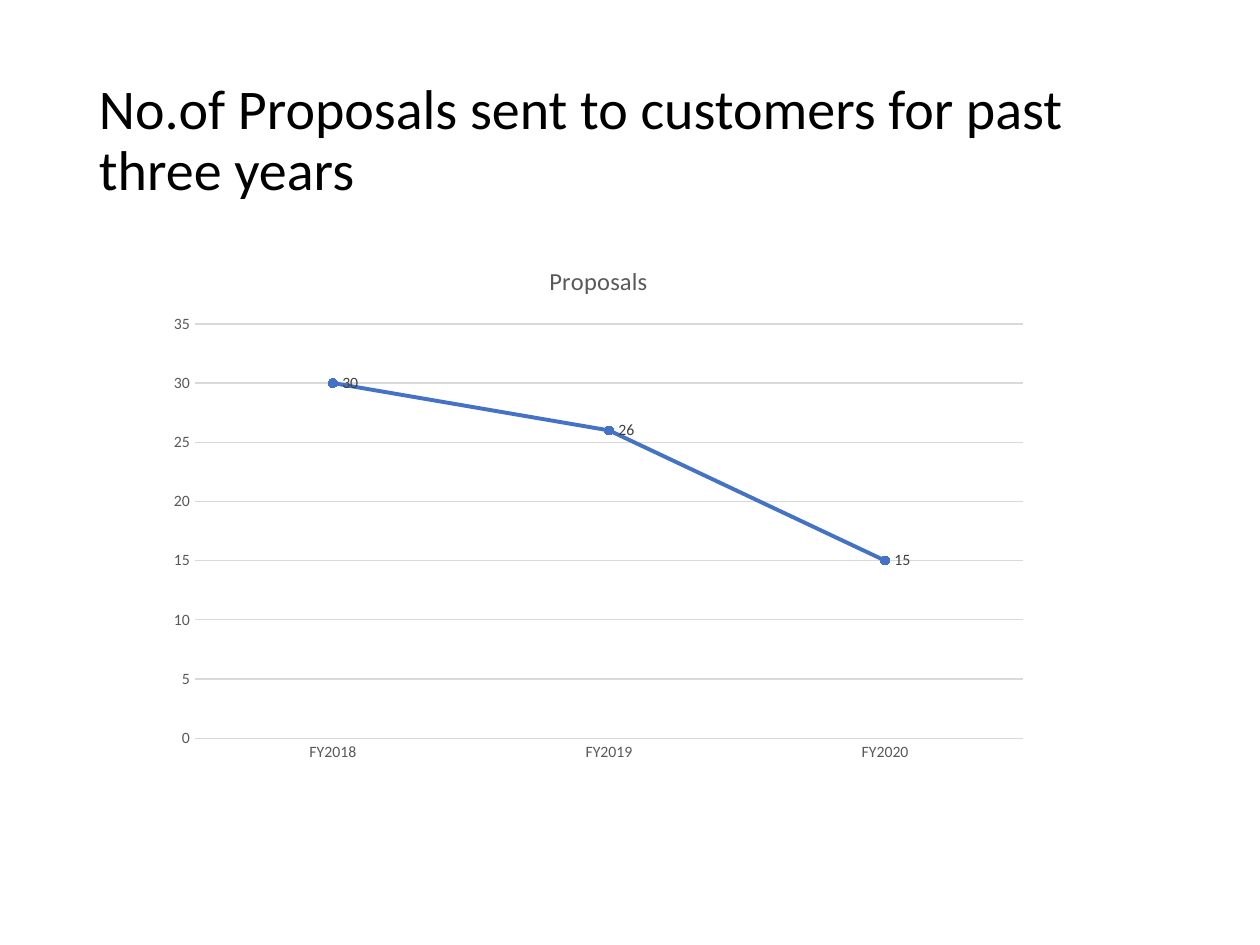
import pptx
import pptx.chart.data
import pptx.dml.color
import pptx.enum.chart
import pptx.enum.text
import pptx.util

Pt = pptx.util.Pt
FONT = "Calibri"
COLORS = {
    "title": "000000",
    "axis_text": "595959",
    "label": "404040",
    "grid": "D9D9D9",
    "series": "4472C4",
}
PROPOSALS = {"FY2018": 30, "FY2019": 26, "FY2020": 15}


def color(name):
    return pptx.dml.color.RGBColor.from_string(COLORS[name])


def style_font(font, size, color_name):
    font.name = FONT
    font.size = Pt(size)
    font.bold = False
    font.color.rgb = color(color_name)


def style_line(line, width, color_name):
    line.width = Pt(width)
    line.color.rgb = color(color_name)


def add_title(slide, text):
    box = slide.shapes.add_textbox(Pt(49.5), Pt(28.75), Pt(621), Pt(104.4))
    frame = box.text_frame
    frame.word_wrap = True
    frame.vertical_anchor = pptx.enum.text.MSO_ANCHOR.MIDDLE
    paragraph = frame.paragraphs[0]
    paragraph.text = text
    paragraph.line_spacing = 0.9
    style_font(paragraph.font, 32, "title")


def style_axes(chart):
    for axis in (chart.category_axis, chart.value_axis):
        axis.major_tick_mark = pptx.enum.chart.XL_TICK_MARK.NONE
        axis.minor_tick_mark = pptx.enum.chart.XL_TICK_MARK.NONE
        style_font(axis.tick_labels.font, 9, "axis_text")
    style_line(chart.category_axis.format.line, 0.75, "grid")
    value_axis = chart.value_axis
    value_axis.minimum_scale = 0
    value_axis.maximum_scale = 35
    value_axis.major_unit = 5
    value_axis.format.line.fill.background()
    style_line(value_axis.major_gridlines.format.line, 0.75, "grid")


def style_series(series):
    series.smooth = False
    style_line(series.format.line, 2.25, "series")
    marker = series.marker
    marker.style = pptx.enum.chart.XL_MARKER_STYLE.CIRCLE
    marker.size = 5
    marker.format.fill.solid()
    marker.format.fill.fore_color.rgb = color("series")
    style_line(marker.format.line, 0.75, "series")
    labels = series.data_labels
    labels.show_value = True
    labels.position = pptx.enum.chart.XL_LABEL_POSITION.RIGHT
    style_font(labels.font, 9, "label")


def add_line_chart(slide, name, values):
    data = pptx.chart.data.CategoryChartData()
    data.categories = list(values)
    data.add_series(name, list(values.values()))
    chart = slide.shapes.add_chart(
        pptx.enum.chart.XL_CHART_TYPE.LINE_MARKERS_STACKED,
        Pt(89.25), Pt(138.25), Pt(505.5), Pt(303), data,
    ).chart
    style_font(chart.font, 10, "title")
    chart.has_legend = False
    chart.has_title = True
    paragraph = chart.chart_title.text_frame.paragraphs[0]
    paragraph.text = name
    style_font(paragraph.font, 14, "axis_text")
    chart.chart_title.include_in_layout = False
    chart.plots[0].vary_by_categories = False
    style_axes(chart)
    style_series(chart.plots[0].series[0])


def main():
    presentation = pptx.Presentation()
    presentation.slide_width = Pt(720)
    presentation.slide_height = Pt(540)
    slide = presentation.slides.add_slide(presentation.slide_layouts[6])
    add_title(slide, "No.of Proposals sent to customers for past three years")
    add_line_chart(slide, "Proposals", PROPOSALS)
    presentation.save("out.pptx")


if __name__ == "__main__":
    main()
